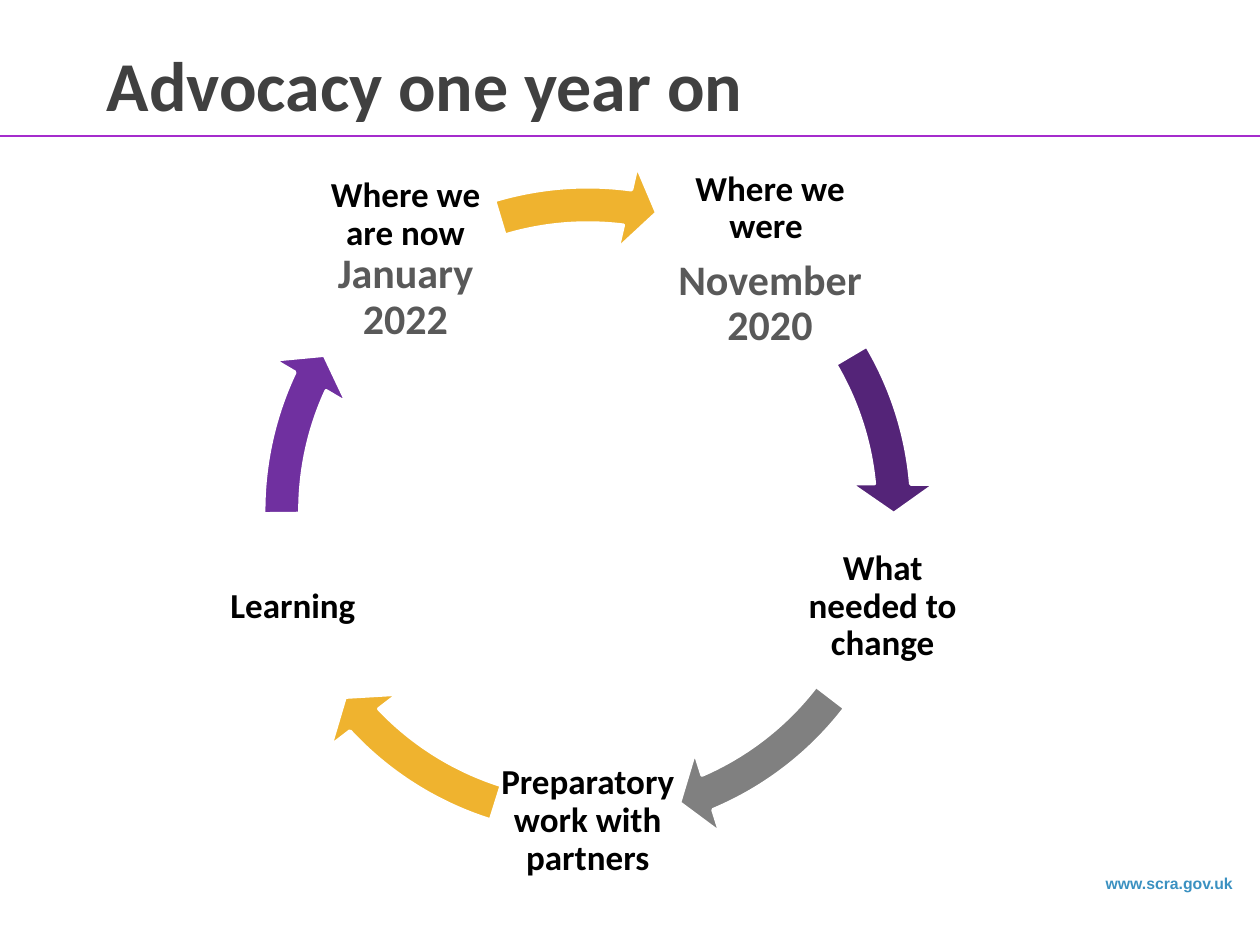
"""Builds the slide "Advocacy one year on" with a five-stage cycle."""
from math import cos, radians, sin

from lxml import etree
from pptx import Presentation
from pptx.dml.color import RGBColor
from pptx.enum.shapes import MSO_CONNECTOR, MSO_SHAPE
from pptx.enum.text import MSO_ANCHOR, PP_ALIGN
from pptx.oxml.ns import qn
from pptx.util import Cm, Pt

STRAIGHT = MSO_CONNECTOR.STRAIGHT
CIRCULAR_ARROW = MSO_SHAPE.CIRCULAR_ARROW
MIDDLE = MSO_ANCHOR.MIDDLE
LEFT, CENTER = PP_ALIGN.LEFT, PP_ALIGN.CENTER

CENTER_X, CENTER_Y = 11.85, 10.3
STAGE_RADIUS = 6.25
STAGE_HEIGHT = 3.73
ARROW_SIZE = 14.05
UNITS_PER_DEGREE = 0.6

HEADING = (20, "000000")
DATE = (24, "595959")
STAGES = [
    (4.52, [[("Where we were ", HEADING)], [("November 2020", DATE)]],
     329.4, 354.93, "542478"),
    (3.73, [[("What needed to change", HEADING)]], 37.52, 66.96, "808080"),
    (3.73, [[("Preparatory work with partners", HEADING)]],
     107.46, 136.9, "EFB32F"),
    (3.73, [[("Learning", HEADING)]], 179.48, 205.01, "7030A0"),
    (3.73, [[("Where we are now ", HEADING), ("January 2022", DATE)]],
     253.27, 277.44, "EFB32F"),
]


def color(hex_string):
    return RGBColor.from_string(hex_string)


class SlideBuilder:
    def __init__(self, slide, font_name="Calibri"):
        self.slide = slide
        self.font_name = font_name

    def style_run(self, run, size, hex_string, font_name=None):
        font = run.font
        font.name = font_name or self.font_name
        font.size = Pt(size)
        font.bold = True
        font.color.rgb = color(hex_string)

    def title(self, text, left, top, width, height):
        shape = self.slide.shapes.title
        shape.left, shape.top = Cm(left), Cm(top)
        shape.width, shape.height = Cm(width), Cm(height)
        text_frame = shape.text_frame
        text_frame.text = text
        text_frame.vertical_anchor = MIDDLE
        paragraph = text_frame.paragraphs[0]
        paragraph.alignment = LEFT
        self.style_run(paragraph.runs[0], 40, "404040")

    def rule(self, top, width):
        connector = self.slide.shapes.add_connector(
            STRAIGHT, 0, Cm(top), Cm(width), Cm(top))
        connector.line.color.rgb = color("A52CCD")
        connector.line.width = Pt(0.75)
        properties = connector._element.spPr
        etree.SubElement(properties, qn("a:effectLst"))

    def web_address(self, text, left, top, width, height):
        shape = self.slide.shapes.add_textbox(
            Cm(left), Cm(top), Cm(width), Cm(height))
        text_frame = shape.text_frame
        text_frame.word_wrap = False
        text_frame.text = text
        paragraph = text_frame.paragraphs[0]
        paragraph.alignment = CENTER
        self.style_run(paragraph.runs[0], 9, "3B91C1", "Arial")

    def stage(self, paragraphs, angle, width):
        middle_x = CENTER_X + STAGE_RADIUS * cos(radians(angle))
        middle_y = CENTER_Y + STAGE_RADIUS * sin(radians(angle))
        shape = self.slide.shapes.add_textbox(
            Cm(middle_x - width / 2), Cm(middle_y - STAGE_HEIGHT / 2),
            Cm(width), Cm(STAGE_HEIGHT))
        text_frame = shape.text_frame
        text_frame.word_wrap = True
        text_frame.vertical_anchor = MIDDLE
        text_frame.margin_left = text_frame.margin_right = Cm(0.08)
        text_frame.margin_top = text_frame.margin_bottom = Cm(0.08)
        for index, runs in enumerate(paragraphs):
            paragraph = (text_frame.add_paragraph() if index
                         else text_frame.paragraphs[0])
            paragraph.alignment = CENTER
            paragraph.line_spacing = 0.9
            paragraph.space_after = Pt(7)
            for text, (size, hex_string) in runs:
                run = paragraph.add_run()
                run.text = text
                self.style_run(run, size, hex_string)

    def arrow(self, start, end, hex_string):
        shape = self.slide.shapes.add_shape(
            CIRCULAR_ARROW, Cm(CENTER_X - ARROW_SIZE / 2),
            Cm(CENTER_Y - ARROW_SIZE / 2), Cm(ARROW_SIZE), Cm(ARROW_SIZE))
        shape.shadow.inherit = False
        shape.fill.solid()
        shape.fill.fore_color.rgb = color(hex_string)
        shape.line.color.rgb = color("FFFFFF")
        shape.line.width = Pt(2)
        angles = [degrees * UNITS_PER_DEGREE for degrees in (5.59, end, start)]
        for index, value in enumerate([0.052, *angles, 0.061]):
            shape.adjustments[index] = value


def main():
    presentation = Presentation()
    presentation.slide_width, presentation.slide_height = Cm(25.4), Cm(19.05)
    slide = presentation.slides.add_slide(presentation.slide_layouts[5])
    builder = SlideBuilder(slide)
    builder.web_address("www.scra.gov.uk", 22.02, 17.48, 3.1, 0.64)
    builder.rule(2.74, 25.4)
    builder.title("Advocacy one year on", 1.9, 0.1, 18.85, 3.18)
    for index, (width, paragraphs, start, end, fill) in enumerate(STAGES):
        builder.stage(paragraphs, -54 + index * 360 / len(STAGES), width)
        builder.arrow(start, end, fill)
    presentation.save("out.pptx")


if __name__ == "__main__":
    main()
